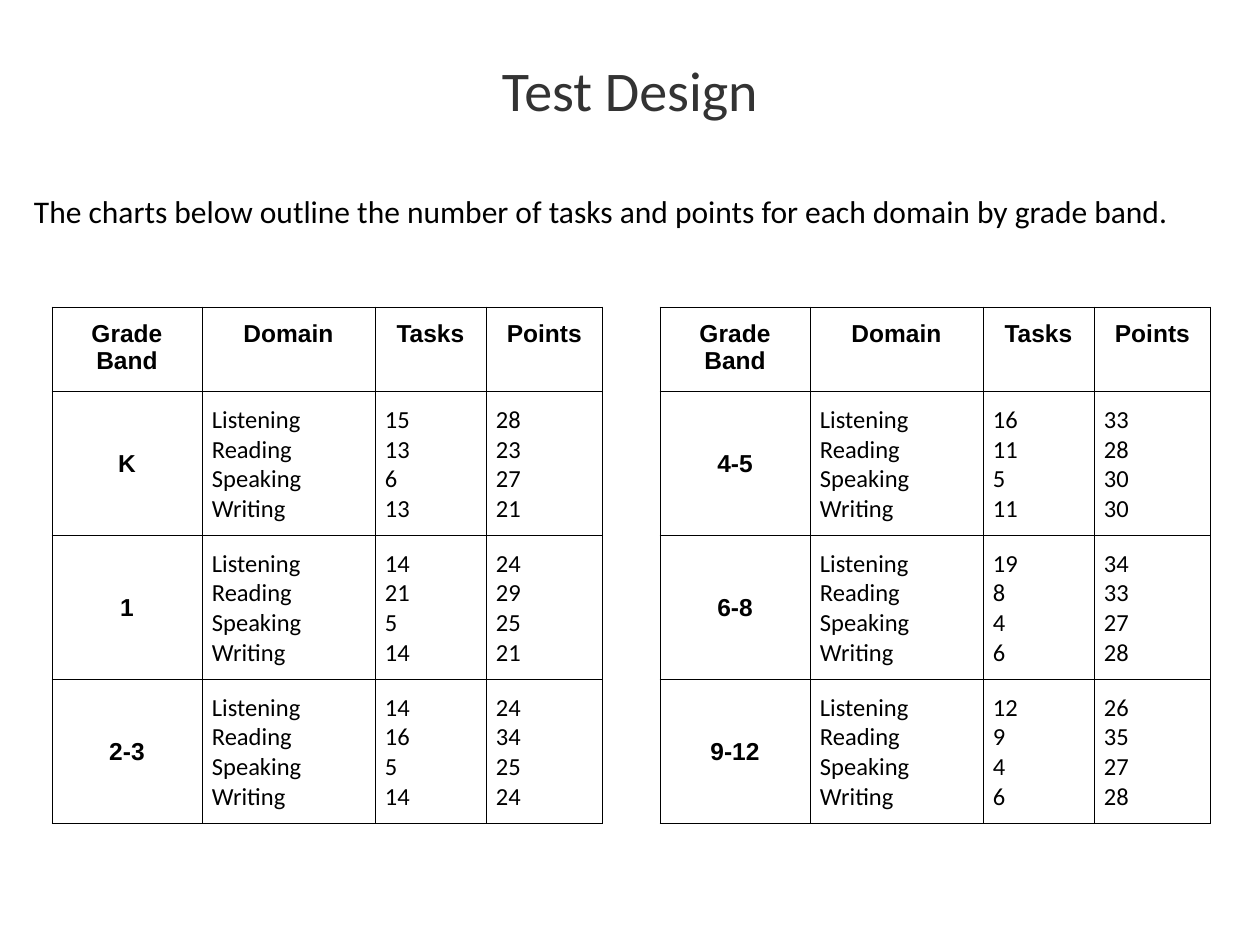
from lxml import etree
from pptx import Presentation
from pptx.dml.color import RGBColor
from pptx.enum.text import MSO_ANCHOR, PP_ALIGN
from pptx.oxml.ns import qn
from pptx.util import Pt

TOP, MID = MSO_ANCHOR.TOP, MSO_ANCHOR.MIDDLE
LEFT, CENTER = PP_ALIGN.LEFT, PP_ALIGN.CENTER
SCALE = 914400 / 126
BLACK = "000000"
HEADS = ["Grade Band", "Domain", "Tasks", "Points"]
DOMAINS = ["Listening", "Reading", "Speaking", "Writing"]
COLS = [150, 173, 111, 117]
ROWS = [81, 144, 144, 144]
LOWER = [
    ("K", [15, 13, 6, 13], [28, 23, 27, 21]),
    ("1", [14, 21, 5, 14], [24, 29, 25, 21]),
    ("2-3", [14, 16, 5, 14], [24, 34, 25, 24]),
]
UPPER = [
    ("4-5", [16, 11, 5, 11], [33, 28, 30, 30]),
    ("6-8", [19, 8, 4, 6], [34, 33, 27, 28]),
    ("9-12", [12, 9, 4, 6], [26, 35, 27, 28]),
]
HEAD = {"name": "Arial", "size": Pt(14), "bold": True}
BODY = {"name": "Calibri", "size": Pt(14), "bold": False}


def px(n):
    """Turn pixels into EMU."""
    return round(n * SCALE)


def color(code):
    """Turn a hex string into a colour."""
    return RGBColor.from_string(code)


def write(frame, text, form, align, tint=BLACK):
    """Fill a text frame with formatted lines."""
    frame.text = text
    for para in frame.paragraphs:
        para.alignment = align
        for run in para.runs:
            for key, value in form.items():
                setattr(run.font, key, value)
            run.font.color.rgb = color(tint)


def inset(item, side, edge):
    """Set the margins of a cell or text frame."""
    item.margin_left = item.margin_right = px(side)
    item.margin_top = item.margin_bottom = px(edge)


def border(cell):
    """Draw thin black lines around a cell."""
    props = cell._tc.get_or_add_tcPr()
    for side in ("a:lnL", "a:lnR", "a:lnT", "a:lnB"):
        line = etree.SubElement(props, qn(side), w=str(Pt(0.5)))
        fill = etree.SubElement(line, qn("a:solidFill"))
        etree.SubElement(fill, qn("a:srgbClr"), val=BLACK)


def title(slide, x, y, w, h):
    """Place the slide title."""
    shape = slide.shapes.title
    shape.left, shape.top, shape.width, shape.height = map(px, (x, y, w, h))
    frame = shape.text_frame
    inset(frame, 13, 13)
    frame.vertical_anchor = MID
    form = {"name": "Calibri", "size": Pt(32)}
    write(frame, "Test Design", form, CENTER, "333333")


def intro(slide, x, y, w, h):
    """Place the sentence above the tables."""
    frame = slide.shapes.add_textbox(*map(px, (x, y, w, h))).text_frame
    frame.word_wrap = True
    inset(frame, 13, 13)
    text = ("The charts below outline the number of tasks and points "
            "for each domain by grade band.")
    write(frame, text, {"name": "Calibri", "size": Pt(18)}, LEFT)


def grid(slide, x, y, bands):
    """Place one table of grade bands."""
    box = map(px, (x, y, sum(COLS), sum(ROWS)))
    table = slide.shapes.add_table(len(ROWS), len(COLS), *box).table
    table.first_row = table.horz_banding = False
    for col, w in zip(table.columns, COLS):
        col.width = px(w)
    for row, h in zip(table.rows, ROWS):
        row.height = px(h)
    rows = [HEADS]
    for band, tasks, points in bands:
        lists = (DOMAINS, tasks, points)
        rows.append([band] + ["\n".join(map(str, part)) for part in lists])
    for r, row in enumerate(rows):
        for c, text in enumerate(row):
            cell = table.cell(r, c)
            border(cell)
            cell.fill.background()
            inset(cell, 10, 13)
            cell.vertical_anchor = MID if r and c == 0 else TOP
            head = r == 0 or c == 0
            write(cell.text_frame, text, HEAD if head else BODY,
                  CENTER if head else LEFT)


def main():
    """Build and save the slide."""
    deck = Presentation()
    deck.slide_width, deck.slide_height = px(1260), px(945)
    slide = deck.slides.add_slide(deck.slide_layouts[5])
    title(slide, 0, 0, 1260, 179)
    intro(slide, 21, 179, 1213, 243)
    for x, bands in ((52, LOWER), (660, UPPER)):
        grid(slide, x, 307, bands)
    deck.save("out.pptx")


if __name__ == "__main__":
    main()
